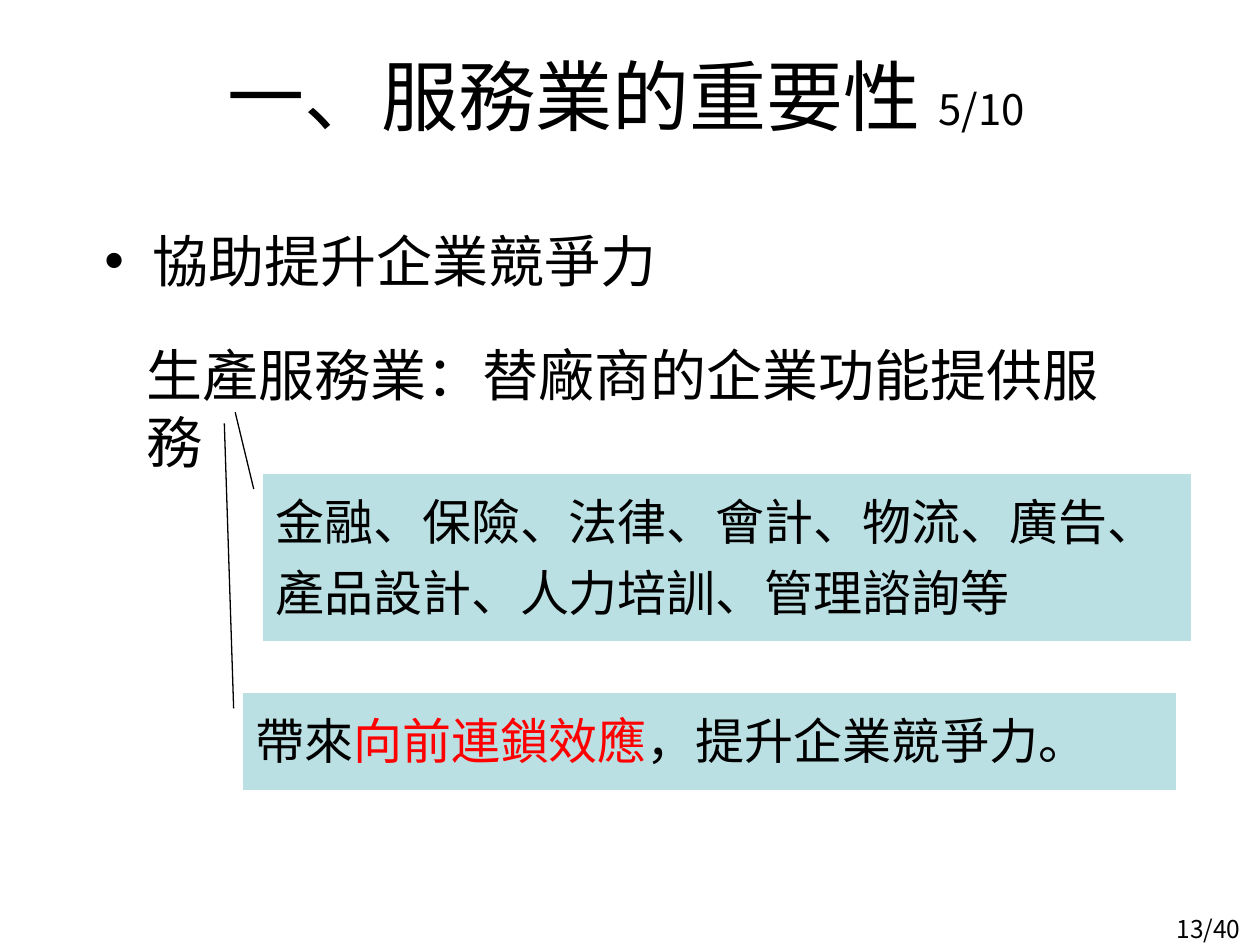
from pptx import Presentation
from pptx.dml.color import RGBColor
from pptx.enum.shapes import MSO_SHAPE
from pptx.enum.text import MSO_ANCHOR, PP_ALIGN
from pptx.oxml.ns import qn
from pptx.util import Emu, Pt
from lxml.etree import SubElement

SCALE = 914400 / 126  # EMU in one px


class Theme:
    cjk, latin = "Noto Sans CJK TC", "Arial"
    black, red, panel = (RGBColor.from_string(c) for c in ("000000", "FF0000", "BBE0E3"))
    title, body, callout, small, number = 44, 32, 28, 24, 14


# Content: boxes are left, top, width, height in px; runs are text, size, colour
TEXTS = [
    {"box": (1147, 908, 106, 40), "align": PP_ALIGN.RIGHT,
     "runs": [("13/40", Theme.number, Theme.black)]},
    {"box": (64, 16, 1134, 158), "align": PP_ALIGN.CENTER, "anchor": MSO_ANCHOR.MIDDLE,
     "runs": [("一、服務業的重要性 ", Theme.title, Theme.black),
              ("5/10 ", Theme.small, Theme.black)]},
    {"box": (92, 220, 1134, 122), "bullet": True,
     "runs": [("協助提升企業競爭力", Theme.body, Theme.black)]},
    {"box": (134, 334, 1033, 79),
     "runs": [("生產服務業：替廠商的企業功能提供服務", Theme.body, Theme.black)]},
]
# Pointer: start y, start x, end y, end x as shares of the callout's size
CALLOUTS = [
    {"box": (263, 474, 928, 167), "pointer": (0.09, -0.01, -0.37, -0.03),
     "runs": [("金融、保險、法律、會計、物流、廣告、產品設計、人力培訓、管理諮詢等",
               Theme.callout, Theme.black)]},
    {"box": (243, 693, 933, 97), "pointer": (0.16, -0.01, -2.78, -0.02),
     "runs": [("帶來", Theme.callout, Theme.black),
              ("向前連鎖效應", Theme.callout, Theme.red),
              ("，提升企業競爭力。", Theme.callout, Theme.black)]},
]


def px(length):
    return Emu(round(length * SCALE))


def add_bullet(paragraph, indent):
    properties = paragraph._p.get_or_add_pPr()
    properties.set("marL", str(px(indent)))
    properties.set("indent", str(-px(indent)))
    SubElement(properties, qn("a:buFont"), typeface=Theme.latin)
    SubElement(properties, qn("a:buChar"), char="•")


def write_runs(paragraph, runs, font_name):
    for text, size, color in runs:
        run = paragraph.add_run()
        run.text = text
        run.font.size = Pt(size)
        run.font.color.rgb = color
        run.font.name = font_name
        SubElement(run.font._element, qn("a:ea"), typeface=Theme.cjk)


def add_text(slide, item):
    frame = slide.shapes.add_textbox(*map(px, item["box"])).text_frame
    frame.word_wrap = True
    frame.vertical_anchor = item.get("anchor", MSO_ANCHOR.TOP)
    paragraph = frame.paragraphs[0]
    paragraph.alignment = item.get("align", PP_ALIGN.LEFT)
    if item.get("bullet"):
        add_bullet(paragraph, indent=48)
    write_runs(paragraph, item["runs"], Theme.cjk)


def add_callout(slide, item):
    shape = slide.shapes.add_shape(MSO_SHAPE.LINE_CALLOUT_1_NO_BORDER, *map(px, item["box"]))
    shape.shadow.inherit = False
    shape.fill.solid()
    shape.fill.fore_color.rgb = Theme.panel
    shape.line.color.rgb = Theme.black
    shape.line.width = Pt(0.75)
    for index, value in enumerate(item["pointer"]):
        shape.adjustments[index] = value
    frame = shape.text_frame
    frame.word_wrap = True
    frame.vertical_anchor = MSO_ANCHOR.TOP
    paragraph = frame.paragraphs[0]
    paragraph.alignment = PP_ALIGN.LEFT
    paragraph.line_spacing = 1.2
    write_runs(paragraph, item["runs"], Theme.latin)


def main():
    presentation = Presentation()
    presentation.slide_width, presentation.slide_height = px(1260), px(945)
    slide = presentation.slides.add_slide(presentation.slide_layouts[6])
    for item in TEXTS:
        add_text(slide, item)
    for item in CALLOUTS:
        add_callout(slide, item)
    presentation.save("out.pptx")


if __name__ == "__main__":
    main()
